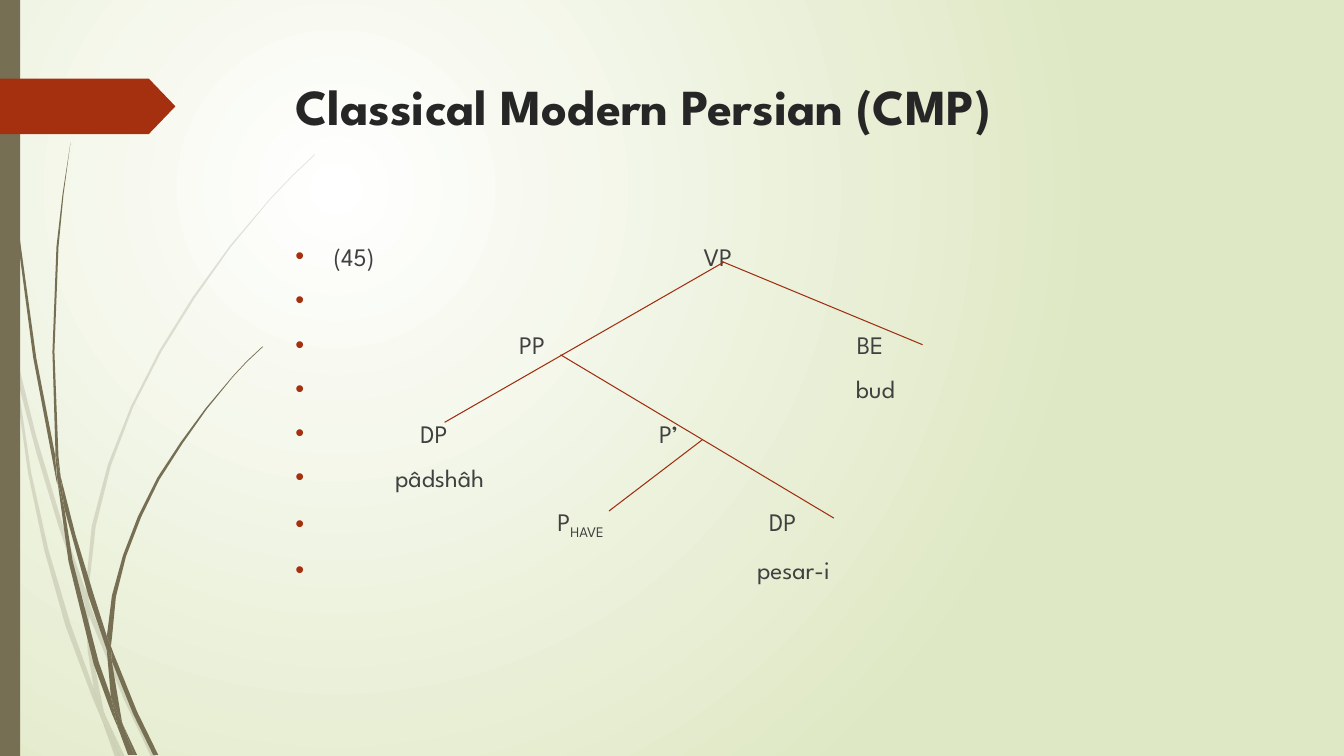
import dataclasses

import lxml.etree
import pptx
import pptx.dml.color
import pptx.enum.shapes
import pptx.enum.text
import pptx.oxml.ns
import pptx.shapes.shapetree
import pptx.text.text
import pptx.util

Inches = pptx.util.Inches
Pt = pptx.util.Pt
qn = pptx.oxml.ns.qn
FONT = "League Spartan"
OLIVE, RUST, LINE = "766F54", "A53010", "9E2E0F"
INDENT = 0.38


@dataclasses.dataclass
class Plant:
    blades: list[list[tuple[float, float]]]
    alpha: int


@dataclasses.dataclass
class Label:
    text: str
    left: float = 0
    sub: str = ""


@dataclasses.dataclass
class Branch:
    start: tuple[float, float]
    end: tuple[float, float]


PALE = Plant([
    [(0.11, 3.5), (0.09, 3.22), (0, 2.82), (0, 2.99), (0.1, 3.44)],
    [(0.58, 5.22), (0.84, 5.99), (0.85, 5.86), (0.62, 5.2), (0.36, 4.33),
     (0.14, 3.45), (0.17, 3.76), (0.36, 4.49)],
    [(0.92, 6.07), (0.88, 5.96), (0.88, 6.1), (1.23, 6.94), (1.5, 7.51),
     (1.55, 7.51), (1.27, 6.92)],
    [(1.19, 7.51), (1.24, 7.51), (1.05, 7.11)],
    [(0.93, 6.83), (0.7, 6.19), (0.48, 5.45), (0.31, 4.69), (0.17, 3.76), (0.11, 3.5),
     (0.28, 4.7), (0.44, 5.46), (0.65, 6.21), (0.92, 6.93), (1.01, 7.14), (0.99, 7.07)],
    [(0.84, 5.99), (0.87, 6.46), (0.93, 6.83), (0.96, 6.92), (1.05, 7.11),
     (1.03, 7.06), (0.91, 6.46), (0.88, 6.1), (0.88, 6.08)],
    [(0.88, 5.84), (0.95, 5.22), (1.1, 4.62), (1.32, 4.04), (1.6, 3.49), (1.93, 2.96),
     (2.29, 2.45), (2.68, 1.98), (2.9, 1.75), (3.12, 1.54), (3.12, 1.53), (2.89, 1.75),
     (2.68, 1.97), (2.28, 2.44), (1.91, 2.95), (1.58, 3.48), (1.3, 4.03), (1.07, 4.61),
     (0.91, 5.22), (0.85, 5.84), (0.85, 5.86), (0.88, 5.96)],
    [(1.01, 7.14), (1.14, 7.51), (1.19, 7.51)],
    [(0.88, 6.08), (0.88, 6.1), (0.88, 5.96), (0.85, 5.86), (0.84, 5.99)],
    [(0.96, 6.92), (0.93, 6.83), (0.99, 7.07), (1.01, 7.14), (1.19, 7.51), (1.05, 7.11)],
], 20)

DARK = Plant([
    [(0.07, 1.1), (0.17, 2.33), (0.33, 3.55), (0.56, 4.77), (0.57, 4.81), (0.55, 4.57),
     (0.55, 4.53), (0.36, 3.55), (0.19, 2.32), (0.08, 1.09), (0.05, 0.48), (0.04, 0),
     (0.03, 0), (0.04, 0.48)],
    [(0.88, 5.92), (1.06, 6.45), (1.06, 6.33), (1.06, 6.31), (0.93, 5.9), (0.75, 5.31),
     (0.6, 4.72), (0.64, 5.05)],
    [(1.13, 6.49), (1.1, 6.41), (1.11, 6.56), (1.32, 7.08), (1.52, 7.49), (1.57, 7.49),
     (1.36, 7.06)],
    [(1.1, 6.91), (0.98, 6.57), (0.72, 5.56), (0.64, 5.05), (0.57, 4.77), (0.68, 5.57),
     (0.93, 6.59), (1.11, 7.08), (1.17, 7.22), (1.16, 7.17)],
    [(0.6, 4.72), (0.58, 4.53), (0.54, 3.49), (0.58, 2.45), (0.63, 1.93), (0.7, 1.41),
     (0.62, 1.93), (0.56, 2.45), (0.52, 3.49), (0.55, 4.49)],
    [(1.33, 7.49), (1.36, 7.49), (1.22, 7.19)],
    [(0.57, 4.77), (0.64, 5.05), (0.6, 4.72), (0.55, 4.49), (0.55, 4.53)],
    [(1.11, 6.33), (1.15, 5.92), (1.25, 5.52), (1.4, 5.13), (1.58, 4.76), (1.81, 4.4),
     (2.05, 4.06), (2.31, 3.74), (2.45, 3.59), (2.61, 3.44), (2.6, 3.44), (2.45, 3.58),
     (2.31, 3.73), (2.04, 4.05), (1.79, 4.39), (1.56, 4.74), (1.37, 5.12), (1.22, 5.51),
     (1.11, 5.91), (1.06, 6.31), (1.1, 6.41)],
    [(1.17, 7.22), (1.27, 7.49), (1.31, 7.49)],
    [(1.06, 6.45), (1.1, 6.91), (1.16, 7.06), (1.22, 7.19), (1.21, 7.16), (1.11, 6.56),
     (1.09, 6.51)],
    [(1.06, 6.45), (1.09, 6.51), (1.11, 6.56), (1.1, 6.41), (1.06, 6.31), (1.06, 6.33)],
    [(1.16, 7.06), (1.1, 6.91), (1.16, 7.17), (1.17, 7.22), (1.3, 7.49), (1.33, 7.49),
     (1.22, 7.19)],
], 100)

ROWS = [
    [Label("(45)"), Label("VP", 6.98)],
    [Label("", 3.92)],
    [Label("PP", 5.15), Label("BE", 8.5)],
    [Label("bud", 8.49)],
    [Label("DP", 4.17), Label("P’", 6.54)],
    [Label("pâdshâh", 3.92)],
    [Label("P", 5.53, "HAVE"), Label("DP", 7.63)],
    [Label("pesar-i", 7.51)],
]

TREE = [
    Branch((7.15, 2.59), (9.15, 3.42)),
    Branch((7.18, 2.6), (4.41, 4.19)),
    Branch((5.56, 3.52), (8.27, 5.14)),
    Branch((6.97, 4.36), (6.04, 5.07)),
]


def shade(code: str) -> pptx.dml.color.RGBColor:
    return pptx.dml.color.RGBColor.from_string(code)


def paint(shape, code: str) -> None:
    shape.shadow.inherit = False
    shape.fill.solid()
    shape.fill.fore_color.rgb = shade(code)
    shape.line.fill.background()


def draw_plant(shapes: pptx.shapes.shapetree.SlideShapes, plant: Plant) -> None:
    for blade in plant.blades:
        edge = [(Inches(x), Inches(y)) for x, y in blade]
        pen = shapes.build_freeform(*edge[0])
        pen.add_line_segments(edge[1:], close=True)
        shape = pen.convert_to_shape()
        paint(shape, OLIVE)
        if plant.alpha < 100:
            tint = shape.fill._xPr.find(qn("a:solidFill"))[0]
            lxml.etree.SubElement(tint, qn("a:alpha"), val=str(plant.alpha * 1000))


def draw_branch(shapes: pptx.shapes.shapetree.SlideShapes, branch: Branch) -> None:
    line = shapes.add_connector(
        pptx.enum.shapes.MSO_CONNECTOR.STRAIGHT,
        *map(Inches, branch.start + branch.end))
    line.line.color.rgb = shade(LINE)
    line.line.width = Pt(0.75)
    lxml.etree.SubElement(line._element.spPr, qn("a:effectLst"))


def style(para: pptx.text.text._Paragraph, size: int, code: str, bold: bool) -> None:
    para.font.name = FONT
    para.font.size = Pt(size)
    para.font.bold = bold
    para.font.color.rgb = shade(code)


def write_row(para: pptx.text.text._Paragraph, row: list[Label], base: float) -> None:
    props = para._p.get_or_add_pPr()
    props.set("marL", str(Inches(INDENT)))
    props.set("indent", str(-Inches(INDENT)))
    para.space_before = Pt(10)
    tint = lxml.etree.SubElement(props, qn("a:buClr"))
    lxml.etree.SubElement(tint, qn("a:srgbClr"), val=RUST)
    lxml.etree.SubElement(props, qn("a:buFont"), typeface="Arial")
    lxml.etree.SubElement(props, qn("a:buChar"), char="•")
    tabs = lxml.etree.SubElement(props, qn("a:tabLst"))
    for label in row:
        if label.left:
            stop = Inches(label.left - base)
            lxml.etree.SubElement(tabs, qn("a:tab"), pos=str(stop), algn="l")
        para.add_run().text = ("\t" if label.left else "") + label.text
        if label.sub:
            run = para.add_run()
            run.text = label.sub
            run._r.get_or_add_rPr().set("baseline", "-25000")
    style(para, 18, "404040", False)


def set_back(slide) -> None:
    fill = slide.background.fill
    fill.gradient()
    for stop, code, spot in zip(fill.gradient_stops, ("FFFFFF", "DFE8C4"), (0, 1)):
        stop.color.rgb = shade(code)
        stop.position = spot
    grad = slide._element.find(".//" + qn("a:gradFill"))
    grad.remove(grad.find(qn("a:lin")))
    ring = lxml.etree.SubElement(grad, qn("a:path"), path="circle")
    lxml.etree.SubElement(ring, qn("a:fillToRect"),
                          l="50000", t="50000", r="100000", b="100000")


def main() -> None:
    deck = pptx.Presentation()
    deck.slide_width, deck.slide_height = Inches(13.33), Inches(7.5)
    slide = deck.slides.add_slide(deck.slide_layouts[5])
    shapes = slide.shapes
    set_back(slide)
    for plant in (PALE, DARK):
        draw_plant(shapes, plant)
    kinds = pptx.enum.shapes.MSO_SHAPE
    bar = shapes.add_shape(kinds.RECTANGLE, 0, 0, Inches(0.2), Inches(7.5))
    paint(bar, OLIVE)
    flag = shapes.add_shape(kinds.PENTAGON, 0, Inches(0.78), Inches(1.74), Inches(0.55))
    flag.adjustments[0] = 0.48
    paint(flag, RUST)

    title = shapes.title
    title.left, title.top, title.width, title.height = map(Inches, (2.83, 0.69, 9.75, 1.4))
    title.text_frame.text = "Classical Modern Persian (CMP)"
    title.text_frame.vertical_anchor = pptx.enum.text.MSO_ANCHOR.TOP
    head = title.text_frame.paragraphs[0]
    head.alignment = pptx.enum.text.PP_ALIGN.LEFT
    style(head, 36, "262626", True)

    left = 2.83
    body = shapes.add_textbox(*map(Inches, (left, 2.34, 9.75, 4.13))).text_frame
    body.word_wrap = True
    for i, row in enumerate(ROWS):
        para = body.add_paragraph() if i else body.paragraphs[0]
        write_row(para, row, left + 0.1)
    for branch in TREE:
        draw_branch(shapes, branch)
    deck.save("out.pptx")


if __name__ == "__main__":
    main()
